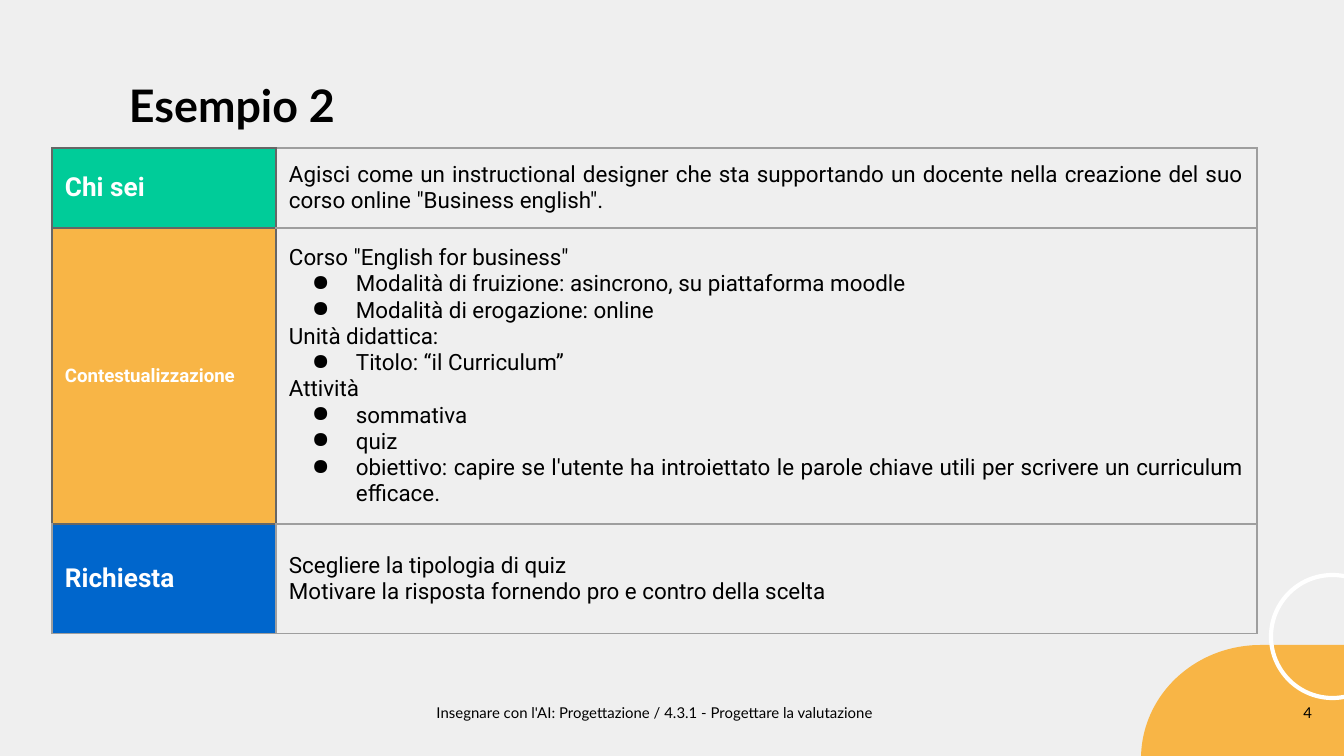
"""Build the slide "Esempio 2": a prompt table with role, context and request."""
from lxml.etree import SubElement
from pptx import Presentation
from pptx.dml.color import RGBColor
from pptx.enum.shapes import MSO_SHAPE
from pptx.enum.text import MSO_ANCHOR, PP_ALIGN
from pptx.oxml.ns import qn
from pptx.util import Pt

PX = 914400 / 134.4
DARK, GREY = "666666", "9E9E9E"


def px(*lengths):
    return [round(length * PX) for length in lengths]


def write(frame, lines, size, font="Roboto", color="000000", bold=False, align=PP_ALIGN.LEFT):
    for index, line in enumerate(lines):
        paragraph = frame.paragraphs[0] if index == 0 else frame.add_paragraph()
        paragraph.text = line.removeprefix("● ")
        paragraph.alignment = align
        if line.startswith("● "):
            properties = paragraph._p.get_or_add_pPr()
            margin, indent = px(67, -44)
            properties.set("marL", str(margin))
            properties.set("indent", str(indent))
            bullet_color = SubElement(properties, qn("a:buClr"))
            SubElement(bullet_color, qn("a:srgbClr"), val="000000")
            SubElement(properties, qn("a:buChar"), char="●")
        paragraph.font.size = Pt(size)
        paragraph.font.name = font
        paragraph.font.bold = bold
        paragraph.font.color.rgb = RGBColor.from_string(color)


presentation = Presentation()
presentation.slide_width, presentation.slide_height = px(1344, 756)
slide = presentation.slides.add_slide(presentation.slide_layouts[6])
slide.background.fill.solid()
slide.background.fill.fore_color.rgb = RGBColor.from_string("EFEFEF")
shapes = slide.shapes

corner = shapes.add_shape(MSO_SHAPE.FLOWCHART_DELAY, *px(1141, 645, 239, 227))
corner.rotation = 180
corner.shadow.inherit = False
corner.fill.solid()
corner.fill.fore_color.rgb = RGBColor.from_string("F8B546")
corner.line.fill.background()

ring = shapes.add_shape(MSO_SHAPE.OVAL, *px(1271, 575, 123, 123))
ring.shadow.inherit = False
ring.fill.background()
ring.line.color.rgb = RGBColor.from_string("FFFFFF")
ring.line.width = Pt(2.25)

for text, place, inset, size, bold, align in [
    ("Insegnare con l'AI: Progettazione / 4.3.1 - Progettare la valutazione",
     (51, 695, 1208, 39), 9, 8, False, PP_ALIGN.CENTER),
    ("4", (1239, 695, 82, 62), 9, 8, False, PP_ALIGN.RIGHT),
    ("Esempio 2", (116, 65, 667, 78), 13, 24, True, PP_ALIGN.LEFT),
]:
    frame = shapes.add_textbox(*px(*place)).text_frame
    frame.word_wrap = True
    frame.margin_left, frame.margin_top, frame.margin_right, frame.margin_bottom = px(*[inset] * 4)
    write(frame, [text], size, "Lato", bold=bold, align=align)

sections = [
    ("Chi sei", 14, "00CC99", 80, DARK * 4, [
        "Agisci come un instructional designer che sta supportando un docente "
        "nella creazione del suo corso online \"Business english\". ",
    ]),
    ("Contestualizzazione", 10, "F8B546", 296, DARK * 4, [
        "Corso \"English for business\"",
        "● Modalità di fruizione: asincrono, su piattaforma moodle",
        "● Modalità di erogazione: online",
        "Unità didattica: ",
        "● Titolo: “il Curriculum”",
        "Attività",
        "● sommativa",
        "● quiz",
        "● obiettivo: capire se l'utente ha introiettato le parole chiave utili "
        "per scrivere un curriculum efficace.",
    ]),
    ("Richiesta", 14, "0066CC", 110, GREY * 2 + DARK + GREY, [
        "Scegliere la tipologia di quiz",
        "Motivare la risposta fornendo pro e contro della scelta",
    ]),
]
prompt = shapes.add_table(len(sections), 2, *px(52, 148, 1205, 486)).table
prompt.first_row = prompt.horz_banding = False
for column, width in zip(prompt.columns, px(224, 981)):
    column.width = width

for row, (heading, size, color, height, heading_edges, details) in enumerate(sections):
    prompt.rows[row].height = px(height)[0]
    heading_cell, detail_cell = prompt.rows[row].cells
    detail_edges = heading_edges[6:12] + GREY * 3
    for cell, edges in ((heading_cell, heading_edges), (detail_cell, detail_edges)):
        cell.vertical_anchor = MSO_ANCHOR.MIDDLE
        cell.margin_left, cell.margin_top, cell.margin_right, cell.margin_bottom = px(*[13] * 4)
        for index, side in enumerate("LRTB"):
            edge = SubElement(cell._tc.get_or_add_tcPr(), qn(f"a:ln{side}"), w=str(Pt(0.75)))
            edge_fill = SubElement(edge, qn("a:solidFill"))
            SubElement(edge_fill, qn("a:srgbClr"), val=edges[index * 6:index * 6 + 6])
    heading_cell.fill.solid()
    heading_cell.fill.fore_color.rgb = RGBColor.from_string(color)
    detail_cell.fill.background()
    write(heading_cell.text_frame, [heading], size, color="FFFFFF", bold=True)
    write(detail_cell.text_frame, details, 12, align=PP_ALIGN.JUSTIFY)

presentation.save("out.pptx")
